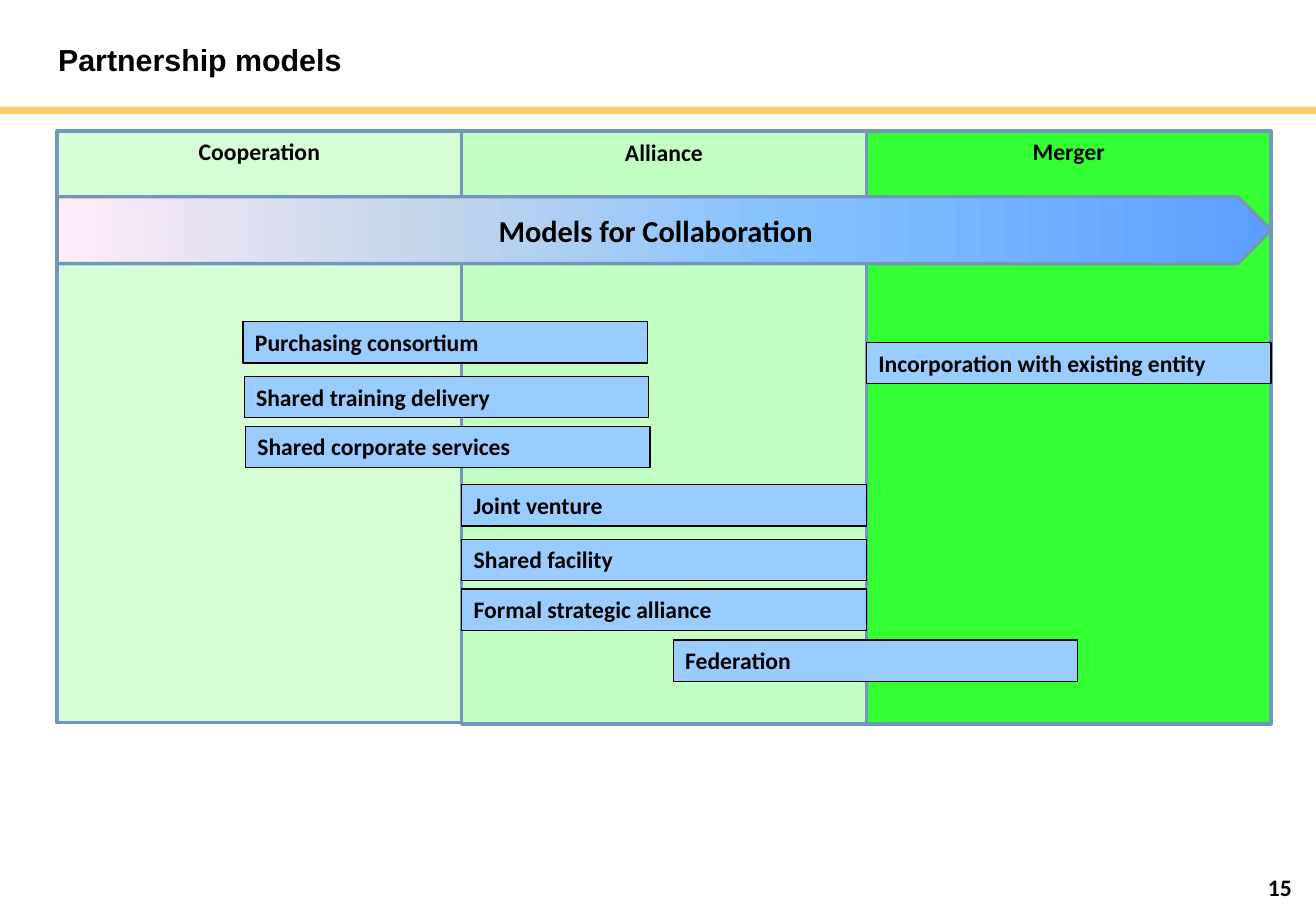
from typing import Any, NamedTuple

from lxml import etree
from pptx import Presentation
from pptx.dml.color import RGBColor
from pptx.enum import shapes, text
from pptx.oxml import ns
from pptx.util import Inches, Pt

COLORS = {
    "ink": "000000",
    "rule": "FFCC66",
    "border": "7197BD",
    "model": "99CCFF",
    "cooperation": "D6FFD6",
    "alliance": "C2FFC2",
    "merger": "33FF33",
}
ARROW_STOPS = [(0, "5E9EFF"), (40, "85C2FF"), (70, "C4D6EB"), (100, "FFEBFA")]

PAGE_WIDTH, PAGE_HEIGHT = 10.83, 7.5
STAGE_LEFT, STAGE_TOP, STAGE_WIDTH = 0.47, 1.08, 3.33
LABEL_HEIGHT = 0.34
RECTANGLE = shapes.MSO_SHAPE.RECTANGLE


class Stage(NamedTuple):
    name: str
    color: str
    height: float = 4.88
    label_top: float = STAGE_TOP


class Model(NamedTuple):
    name: str
    left: float
    top: float


STAGES = [
    Stage("Cooperation", "cooperation", height=4.87),
    Stage("Alliance", "alliance", label_top=1.09),
    Stage("Merger", "merger"),
]
MODELS = [
    Model("Shared training delivery", 2.01, 3.1),
    Model("Shared corporate services", 2.02, 3.51),
    Model("Purchasing consortium", 2, 2.65),
    Model("Joint venture", 3.8, 3.99),
    Model("Shared facility", 3.8, 4.44),
    Model("Formal strategic alliance", 3.8, 4.85),
    Model("Federation", 5.54, 5.27),
    Model("Incorporation with existing entity", 7.13, 2.82),
]


def rgb(name: str) -> RGBColor:
    return RGBColor.from_string(COLORS[name])


def write(box: Any, words: str, *, size: float = 14, font: str = "Calibri",
          align: text.PP_ALIGN = text.PP_ALIGN.LEFT,
          anchor: text.MSO_ANCHOR = text.MSO_ANCHOR.TOP) -> None:
    """Put one bold, wrapped paragraph into a shape or text box."""
    frame = box.text_frame
    frame.word_wrap = True
    frame.vertical_anchor = anchor
    para = frame.paragraphs[0]
    para.alignment = align
    span = para.add_run()
    span.text = words
    span.font.size = Pt(size)
    span.font.name = font
    span.font.bold = True
    span.font.color.rgb = rgb("ink")


def add_label(page: Any, words: str, left: float, top: float, width: float,
              height: float = LABEL_HEIGHT, **style: Any) -> None:
    box = page.shapes.add_textbox(*map(Inches, (left, top, width, height)))
    write(box, words, **style)


def add_block(page: Any, kind: shapes.MSO_SHAPE, left: float, top: float,
              width: float, height: float, *, fill: str | None = None,
              line: str = "border", weight: float = 2) -> Any:
    block = page.shapes.add_shape(kind, *map(Inches, (left, top, width, height)))
    block.shadow.inherit = False
    if fill:
        block.fill.solid()
        block.fill.fore_color.rgb = rgb(fill)
    block.line.color.rgb = rgb(line)
    block.line.width = Pt(weight)
    return block


def fill_gradient(block: Any, stops: list[tuple[int, str]], angle: float) -> None:
    block.fill.gradient()
    block.fill.gradient_angle = angle
    stop_list = block._element.spPr.find(".//" + ns.qn("a:gsLst"))
    for old_stop in list(stop_list):
        stop_list.remove(old_stop)
    for percent, color in stops:
        stop = etree.SubElement(stop_list, ns.qn("a:gs"), pos=str(percent * 1000))
        etree.SubElement(stop, ns.qn("a:srgbClr"), val=color)


def add_rule(page: Any, top: float) -> None:
    rule = page.shapes.add_connector(
        shapes.MSO_CONNECTOR.STRAIGHT,
        *map(Inches, (0, top, PAGE_WIDTH, top)))
    rule.line.color.rgb = rgb("rule")
    rule.line.width = Pt(4.5)
    etree.SubElement(rule._element.spPr, ns.qn("a:effectLst"))


def add_stages(page: Any) -> None:
    lefts = [STAGE_LEFT + i * STAGE_WIDTH for i in range(len(STAGES))]
    for stage, left in zip(STAGES, lefts):
        add_block(page, RECTANGLE, left, STAGE_TOP, STAGE_WIDTH, stage.height,
                  fill=stage.color)
    for stage, left in zip(STAGES, lefts):
        add_label(page, stage.name, left, stage.label_top, STAGE_WIDTH,
                  align=text.PP_ALIGN.CENTER)


def add_arrow(page: Any) -> None:
    arrow = add_block(page, shapes.MSO_SHAPE.PENTAGON, STAGE_LEFT, 1.62,
                      len(STAGES) * STAGE_WIDTH, 0.55)
    fill_gradient(arrow, ARROW_STOPS, 180)
    write(arrow, "Models for Collaboration", size=18,
          align=text.PP_ALIGN.CENTER, anchor=text.MSO_ANCHOR.MIDDLE)


def add_model(page: Any, model: Model) -> None:
    block = add_block(page, RECTANGLE, model.left, model.top, STAGE_WIDTH,
                      LABEL_HEIGHT, fill="model", line="ink", weight=0.75)
    write(block, model.name)


def main() -> None:
    deck = Presentation()
    deck.slide_width = Inches(PAGE_WIDTH)
    deck.slide_height = Inches(PAGE_HEIGHT)
    page = deck.slides.add_slide(deck.slide_layouts[6])

    add_label(page, "15", 9.73, 7.14, 1, align=text.PP_ALIGN.RIGHT)
    add_rule(page, 0.91)
    add_stages(page)
    add_arrow(page)
    for model in MODELS:
        add_model(page, model)
    add_label(page, "Partnership models", 0.38, 0.29, 7.56, 0.4,
              size=18, font="Arial")
    deck.save("out.pptx")


if __name__ == "__main__":
    main()
